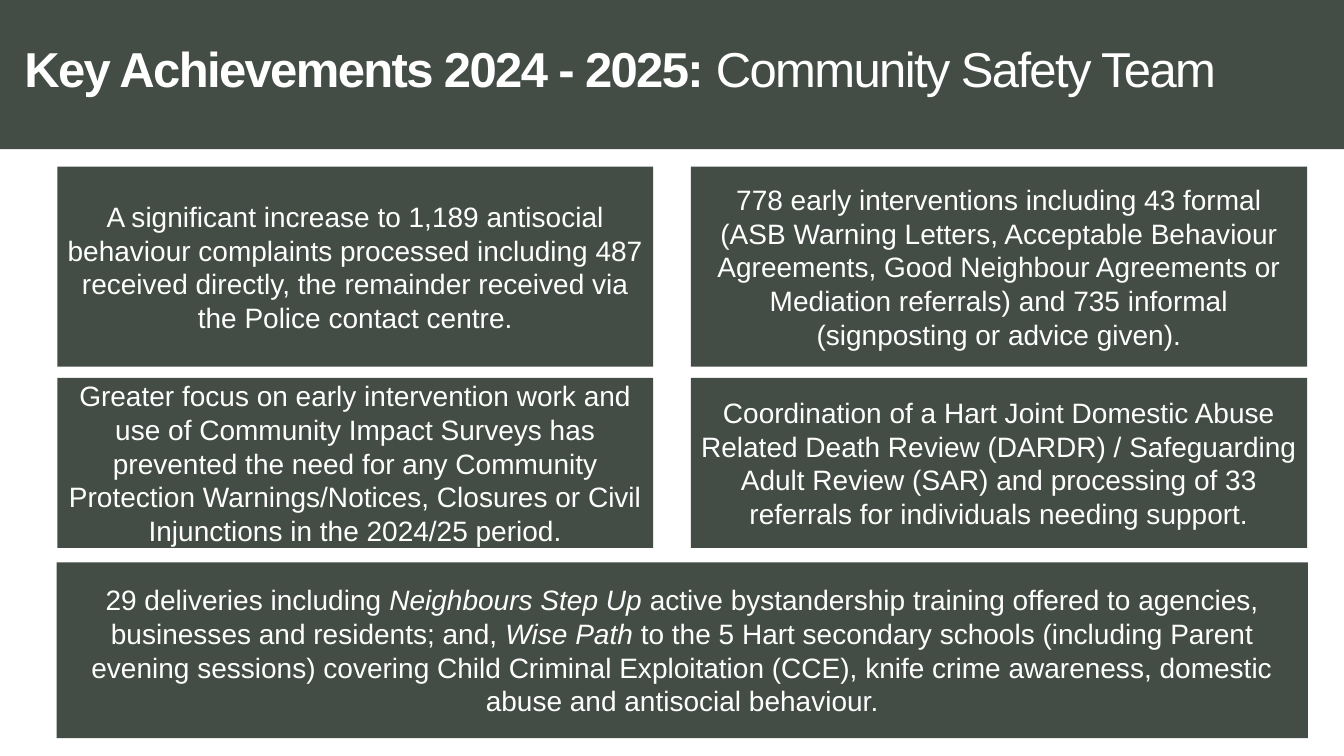
from pptx import Presentation
from pptx.dml.color import RGBColor
from pptx.enum import shapes, text
from pptx.util import Cm, Pt

SLATE = RGBColor(0x43, 0x4D, 0x46)
WHITE = RGBColor(0xFF, 0xFF, 0xFF)

prs = Presentation()
prs.slide_width, prs.slide_height = Cm(33.87), Cm(19.05)
slide = prs.slides.add_slide(prs.slide_layouts[5])


def add_panel(left, top, width, height):
    panel = slide.shapes.add_shape(
        shapes.MSO_SHAPE.RECTANGLE, Cm(left), Cm(top), Cm(width), Cm(height))
    panel.shadow.inherit = False
    panel.fill.solid()
    panel.fill.fore_color.rgb = SLATE
    panel.line.fill.background()
    return panel


def write_runs(shape, runs, alignment, **font_format):
    """Fill a shape with one paragraph; runs pair each text with its own font values."""
    frame = shape.text_frame
    frame.word_wrap = True
    frame.auto_size = text.MSO_AUTO_SIZE.NONE
    frame.vertical_anchor = text.MSO_ANCHOR.MIDDLE
    paragraph = frame.paragraphs[0]
    paragraph.alignment = alignment
    for words, emphasis in runs:
        run = paragraph.add_run()
        run.text = words
        run.font.color.rgb = WHITE
        for name, value in {"name": "Arial", **font_format, **emphasis}.items():
            setattr(run.font, name, value)
    return paragraph


# The banner lies behind the title
banner = add_panel(0, 0, 33.87, 3.76)
slide.shapes._spTree.insert(2, banner._element)

title = slide.shapes.title
title.left, title.top, title.width, title.height = Cm(0.36), Cm(0.23), Cm(33.3), Cm(3.2)
heading = write_runs(
    title,
    [("Key Achievements 2024 - 2025: ", {"bold": True}),
     ("Community Safety Team", {"bold": False})],
    text.PP_ALIGN.LEFT, size=Pt(35))
heading.line_spacing = 0.85
for run in heading.runs:
    run.font._element.set("spc", "-120")

LEFT_COLUMN, RIGHT_COLUMN, FULL_WIDTH = (1.45, 15.01), (17.41, 15.53), (1.43, 31.53)
TOP_ROW, MIDDLE_ROW, BOTTOM_ROW = (4.2, 5.04), (9.52, 4.29), (14.17, 4.43)
ITALIC = {"italic": True}

achievements = [
    (LEFT_COLUMN, TOP_ROW, [
        ("A significant increase to 1,189 antisocial behaviour complaints processed "
         "including 487 received directly, the remainder received via the Police "
         "contact centre.", {})]),
    (RIGHT_COLUMN, TOP_ROW, [
        ("778 early interventions including 43 formal (ASB Warning Letters, Acceptable "
         "Behaviour Agreements, Good Neighbour Agreements or Mediation referrals) and "
         "735 informal (signposting or advice given).", {})]),
    (LEFT_COLUMN, MIDDLE_ROW, [
        ("Greater focus on early intervention work and use of Community Impact Surveys "
         "has prevented the need for any Community Protection Warnings/Notices, "
         "Closures or Civil Injunctions in the 2024/25 period.", {})]),
    (RIGHT_COLUMN, MIDDLE_ROW, [
        ("Coordination of a Hart Joint Domestic Abuse Related Death Review (DARDR) / "
         "Safeguarding Adult Review (SAR) and processing of 33 referrals for "
         "individuals needing support.", {})]),
    (FULL_WIDTH, BOTTOM_ROW, [
        ("29 deliveries including ", {}),
        ("Neighbours Step Up ", ITALIC),
        ("active bystandership training offered to agencies, businesses and residents; "
         "and, ", {}),
        ("Wise Path", ITALIC),
        (" to the 5 Hart secondary schools (including Parent evening sessions) covering "
         "Child Criminal Exploitation (CCE), knife crime awareness, domestic abuse and "
         "antisocial behaviour.", {})]),
]
for (left, width), (top, height), runs in achievements:
    panel = add_panel(left, top, width, height)
    write_runs(panel, runs, text.PP_ALIGN.CENTER, size=Pt(20))

prs.save("out.pptx")
